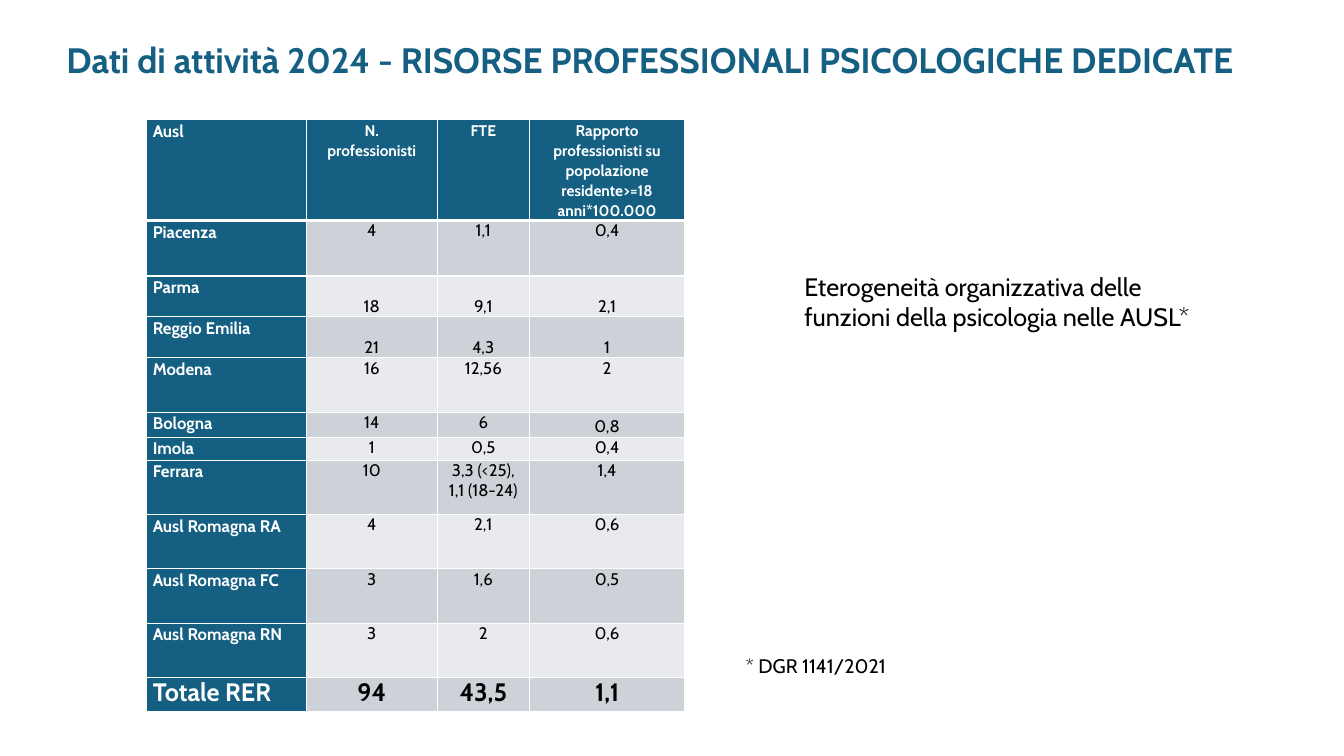
import pptx
import pptx.dml.color
import pptx.enum.text
import pptx.oxml
import pptx.oxml.ns
import pptx.util

Cm = pptx.util.Cm
Pt = pptx.util.Pt
ALIGN = pptx.enum.text.PP_ALIGN
ANCHOR = pptx.enum.text.MSO_ANCHOR
FIT = pptx.enum.text.MSO_AUTO_SIZE

HUES = {
    "blue": "156082",
    "dark": "CCD2D8",
    "light": "E8EAED",
    "white": "FFFFFF",
    "black": "000000",
}
WIDTHS = [4.04, 3.3, 2.32, 3.92]
ROWS = [
    (2.5, ["Ausl", "N.\nprofessionisti", "FTE",
           "Rapporto professionisti su popolazione residente>=18 anni*100.000"]),
    (1.4, ["Piacenza", "4", "1,1", "0,4"]),
    (1.03, ["Parma", "18", "9,1", "2,1"]),
    (1.03, ["Reggio Emilia", "21", "4,3", "1"]),
    (1.37, ["Modena", "16", "12,56", "2"]),
    (0.63, ["Bologna", "14", "6", "0,8"]),
    (0.58, ["Imola", "1", "0,5", "0,4"]),
    (1.37, ["Ferrara", "10", "3,3 (<25),\n1,1 (18-24)", "1,4"]),
    (1.37, ["Ausl Romagna RA", "4", "2,1", "0,6"]),
    (1.37, ["Ausl Romagna FC", "3", "1,6", "0,5"]),
    (1.37, ["Ausl Romagna RN", "3", "2", "0,6"]),
    (0.86, ["Totale RER", "94", "43,5", "1,1"]),
]
LOW = [(row, col) for row in (2, 3) for col in (1, 2, 3)] + [(5, 3)]


def apply(item, form):
    for name, value in form.items():
        setattr(item, name, value)


def tint(key):
    return pptx.dml.color.RGBColor.from_string(HUES[key])


def write(frame, text, hue, font, para):
    frame.text = text
    for line in frame.paragraphs:
        apply(line, para)
        for run in line.runs:
            apply(run.font, {"name": "Cabin", **font})
            run.font.color.rgb = tint(hue)


def place(shape, box):
    names = ("left", "top", "width", "height")
    apply(shape, dict(zip(names, map(Cm, box))))


def edge(cell, sides):
    props = cell._tc.get_or_add_tcPr()
    for side, width in sides.items():
        props.append(pptx.oxml.parse_xml(
            f'<a:ln{side} {pptx.oxml.ns.nsdecls("a")} w="{Pt(width)}">'
            f'<a:solidFill><a:srgbClr val="{HUES["white"]}"/></a:solidFill>'
            f'</a:ln{side}>'))


def style(cell, text, row, col):
    head, total = row == 0, row == len(ROWS) - 1
    mark = head or col == 0
    edge(cell, {"L": 1, "R": 1, "T": 3 if row == 1 else 1, "B": 3 if head else 1})
    cell.fill.solid()
    band = "dark" if row % 2 else "light"
    cell.fill.fore_color.rgb = tint("blue" if mark else band)
    apply(cell, {
        "margin_left": Cm(0.17), "margin_right": Cm(0.17),
        "margin_top": 0, "margin_bottom": 0,
        "vertical_anchor": ANCHOR.BOTTOM if (row, col) in LOW else ANCHOR.TOP,
    })
    size = 18 if total else 11 if head and col else 12
    write(cell.text_frame, text, "white" if mark else "black",
          {"size": Pt(size), "bold": mark or total},
          {"alignment": ALIGN.CENTER if col else ALIGN.LEFT,
           "line_spacing": 1.07 if mark and not total else 1.0})


def add_grid(slide):
    high = sum(row[0] for row in ROWS)
    box = map(Cm, (3.68, 3.02, sum(WIDTHS), high))
    grid = slide.shapes.add_table(len(ROWS), len(WIDTHS), *box).table
    apply(grid, {"first_row": False, "horz_banding": False})
    for col, width in zip(grid.columns, WIDTHS):
        col.width = Cm(width)
    for row, (tall, texts) in enumerate(ROWS):
        grid.rows[row].height = Cm(tall)
        for col, text in enumerate(texts):
            style(grid.cell(row, col), text, row, col)


def add_title(slide, text, box):
    title = slide.shapes.title
    place(title, box)
    apply(title.text_frame, {
        "word_wrap": True, "auto_size": FIT.NONE,
        "vertical_anchor": ANCHOR.MIDDLE,
    })
    write(title.text_frame, text, "blue", {"size": Pt(25.2), "bold": True},
          {"alignment": ALIGN.LEFT, "line_spacing": 0.9})


def add_note(slide, text, box, size):
    note = slide.shapes.add_textbox(*map(Cm, box))
    apply(note.text_frame, {"word_wrap": True, "auto_size": FIT.SHAPE_TO_FIT_TEXT})
    write(note.text_frame, text, "black", {"size": Pt(size)},
          {"alignment": ALIGN.LEFT})


def main():
    deck = pptx.Presentation()
    apply(deck, {"slide_width": Cm(33.87), "slide_height": Cm(19.05)})
    slide = deck.slides.add_slide(deck.slide_layouts[5])
    add_title(slide, "Dati di attività 2024 - RISORSE PROFESSIONALI PSICOLOGICHE DEDICATE",
              (1.42, 0.86, 31.01, 1.4))
    add_grid(slide)
    add_note(slide, "Eterogeneità organizzativa delle funzioni della psicologia nelle AUSL*",
             (20.02, 6.71, 11.23, 1.8), 18)
    add_note(slide, "* DGR 1141/2021", (18.54, 16.36, 9.58, 0.86), 14)
    deck.save("out.pptx")


if __name__ == "__main__":
    main()
